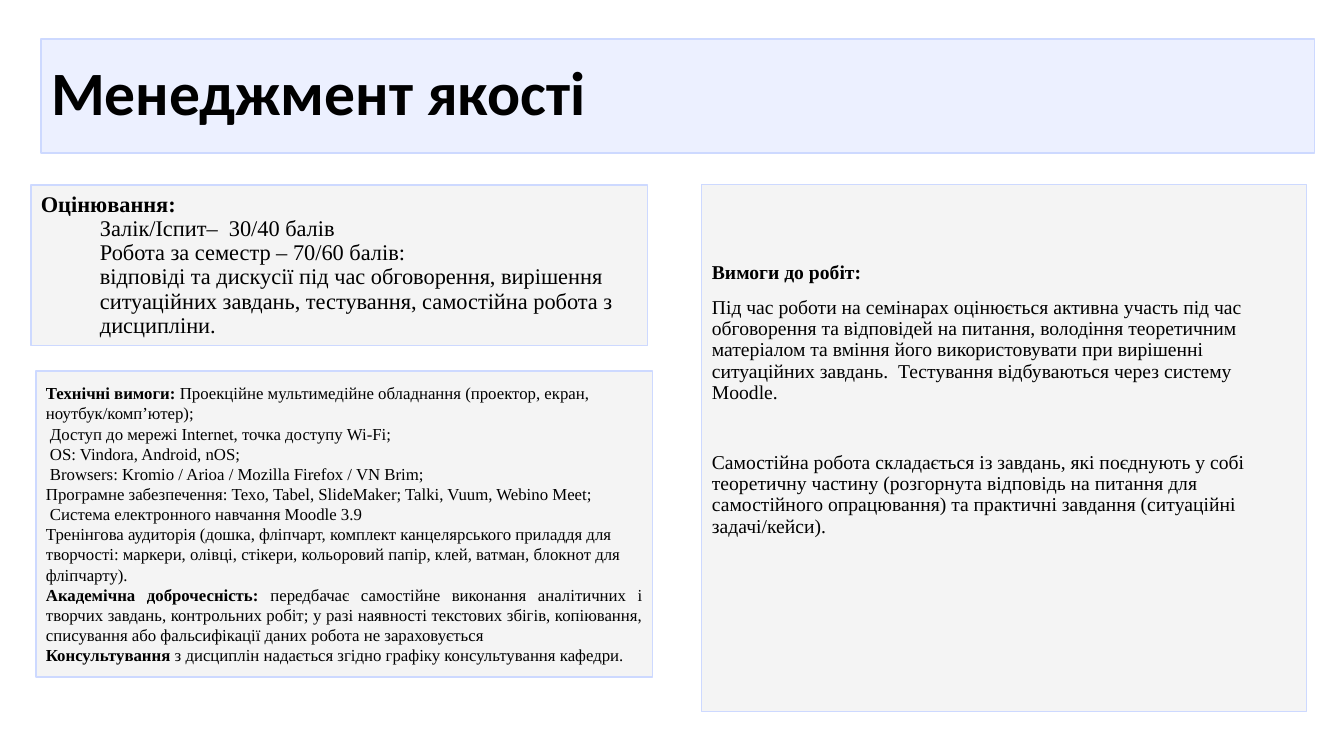
from lxml import etree
from pptx import Presentation
from pptx.dml.color import RGBColor
from pptx.enum.text import MSO_ANCHOR, MSO_AUTO_SIZE, PP_ALIGN
from pptx.oxml.ns import qn
from pptx.util import Emu, Pt

TOP, MID = MSO_ANCHOR.TOP, MSO_ANCHOR.MIDDLE
LEFT, FULL = PP_ALIGN.LEFT, PP_ALIGN.JUSTIFY
NOFIT = MSO_AUTO_SIZE.NONE
TITLE_ONLY = 5
COLORS = {"head": "E5EBFF", "card": "F0F0F0", "edge": "CDD9FF", "ink": "000000"}


def px(n):
    return Emu(round(n * 914400 / 100.8))


def put(target, values):
    for name, value in values.items():
        setattr(target, name, value)


class Deck:
    serif = "Times New Roman"
    sans = "Calibri"

    def __init__(self):
        self.prs = Presentation()
        put(self.prs, {"slide_width": px(1344), "slide_height": px(756)})
        self.slide = self.prs.slides.add_slide(self.prs.slide_layouts[TITLE_ONLY])

    def panel(self, shape, box, fill, alpha, anchor=MID):
        put(shape, dict(zip(("left", "top", "width", "height"), map(px, box))))
        shape.fill.solid()
        shape.fill.fore_color.rgb = RGBColor.from_string(COLORS[fill])
        tint = next(shape.element.spPr.iter(qn("a:srgbClr")))
        etree.SubElement(tint, qn("a:alpha")).set("val", str(alpha * 1000))
        shape.line.color.rgb = RGBColor.from_string(COLORS["edge"])
        shape.line.width = Pt(0.75)
        frame = shape.text_frame
        put(frame, {"word_wrap": True, "auto_size": NOFIT, "vertical_anchor": anchor})
        return frame

    def words(self, para, runs, size, font, fmt, margin=0, indent=0):
        props = para._p.get_or_add_pPr()
        props.set("marL", str(px(margin)))
        props.set("indent", str(px(indent)))
        put(para, {"alignment": LEFT, "space_before": Pt(0), **fmt})
        for text, bold in runs:
            run = para.add_run()
            run.text = text
            put(run.font, {"size": Pt(size), "name": font, "bold": bold})
            run.font.color.rgb = RGBColor.from_string(COLORS["ink"])

    def title(self, text, box):
        frame = self.panel(self.slide.shapes.title, box, "head", 70)
        self.words(frame.paragraphs[0], [(text, True)], 44, self.sans,
                   {"line_spacing": 0.9})

    def card(self, box, size, paras, anchor=MID, inset=5):
        shape = self.slide.shapes.add_textbox(*map(px, box))
        frame = self.panel(shape, box, "card", 69, anchor)
        frame.margin_top = px(inset)
        for i, (runs, fmt, *shift) in enumerate(paras):
            para = frame.add_paragraph() if i else frame.paragraphs[0]
            self.words(para, runs, size, self.serif, fmt, *shift)


def main():
    deck = Deck()
    tight = {"line_spacing": 0.9}
    full = {"alignment": FULL}
    deck.title("Менеджмент якості", (41, 39, 1274, 114))
    deck.card((31, 185, 617, 161), 16, [
        ([("Оцінювання:", True)], tight, 59, -59),
        ([("Залік/Іспит–  30/40 балів", False)], tight, 59),
        ([("Робота за семестр – 70/60 балів:", False)], tight, 59),
        ([("відповіді та дискусії під час обговорення, вирішення ситуаційних "
           "завдань, тестування, самостійна робота з дисципліни.", False)], tight, 59),
    ])
    deck.card((36, 371, 617, 306), 12, [
        ([("Технічні вимоги: ", True),
          ("Проекційне мультимедійне обладнання (проектор, екран, "
           "ноутбук/комп’ютер);", False)], {}),
        ([("Доступ до мережі Internet, точка доступу Wi-Fi;", False)], {}, 0, 4),
        ([("OS: Vindora, Android, nOS;", False)], {}, 0, 4),
        ([("Browsers: Kromio / Arioa / Mozilla Firefox / VN Brim;", False)], {}, 0, 4),
        ([("Програмне забезпечення: Texo, Tabel, SlideMaker; Talki, Vuum, "
           "Webino Meet;", False)], {}),
        ([("Система електронного навчання Moodle 3.9", False)], {}, 0, 4),
        ([("Тренінгова аудиторія (дошка, фліпчарт, комплект канцелярського "
           "приладдя для творчості: маркери, олівці, стікери, кольоровий папір, "
           "клей, ватман, блокнот для фліпчарту).", False)], {}),
        ([("Академічна доброчесність:", True),
          (" передбачає самостійне виконання аналітичних і творчих завдань, "
           "контрольних робіт; у разі наявності текстових збігів, копіювання, "
           "списування або фальсифікації даних робота не зараховується", False)], full),
        ([("Консультування", True),
          (" з дисциплін надається згідно графіку консультування кафедри.",
           False)], full),
    ])
    deck.card((702, 185, 605, 527), 14, [
        ([("Вимоги до робіт:", True)], {}),
        ([("Під час роботи на семінарах оцінюється активна участь під час "
           "обговорення та відповідей на питання, володіння теоретичним матеріалом "
           "та вміння його використовувати при вирішенні ситуаційних завдань.  "
           "Тестування відбуваються через систему Moodle.", False)],
         {**tight, "space_before": Pt(10)}),
        ([("Самостійна робота складається із завдань, які поєднують у собі "
           "теоретичну частину (розгорнута відповідь на питання для самостійного "
           "опрацювання) та практичні завдання (ситуаційні задачі/кейси).", False)],
         {**tight, "space_before": Pt(35)}),
    ], TOP, 75)
    deck.prs.save("out.pptx")


if __name__ == "__main__":
    main()
